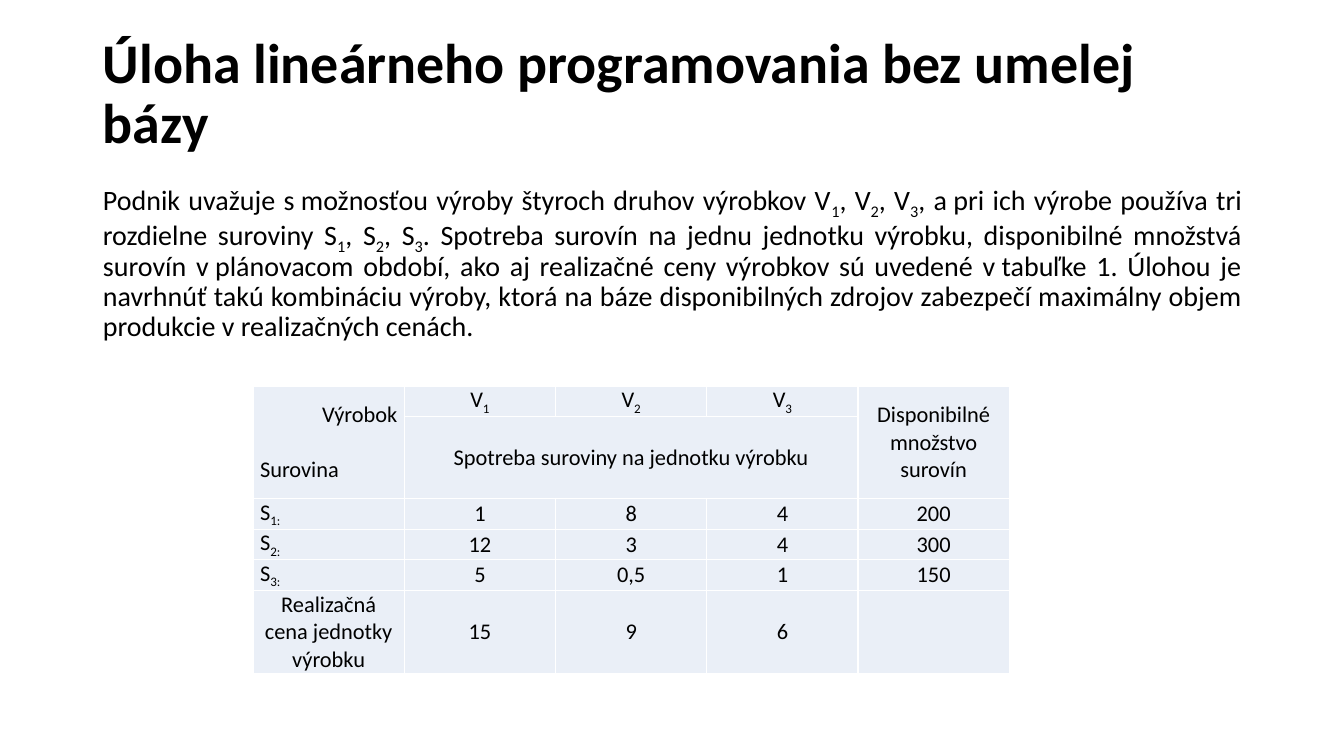
from dataclasses import dataclass

from lxml import etree
from pptx import Presentation
from pptx.dml.color import RGBColor
from pptx.enum.text import MSO_ANCHOR, MSO_AUTO_SIZE, PP_ALIGN
from pptx.oxml.ns import qn
from pptx.util import Inches, Pt

LEFT, CENTER, RIGHT = PP_ALIGN.LEFT, PP_ALIGN.CENTER, PP_ALIGN.RIGHT
JUSTIFY = PP_ALIGN.JUSTIFY
MIDDLE, TOP = MSO_ANCHOR.MIDDLE, MSO_ANCHOR.TOP
NO_AUTOFIT = MSO_AUTO_SIZE.NONE


@dataclass(frozen=True)
class Theme:
    font: str = "Calibri"
    text: str = "000000"
    cell: str = "EAEFF7"
    border: str = "FFFFFF"
    title_size: int = 40
    body_size: int = 20
    table_size: int = 16


THEME = Theme()

# Braces mark subscripts
TITLE = "Úloha lineárneho programovania bez umelej bázy"
TASK = (
    "Podnik uvažuje s\u00a0možnosťou výroby štyroch druhov výrobkov V{1}, V{2}, V{3}, "
    "a\u00a0pri ich výrobe používa tri rozdielne suroviny S{1}, S{2}, S{3}. "
    "Spotreba surovín na jednu jednotku výrobku, disponibilné množstvá surovín "
    "v\u00a0plánovacom období, ako aj realizačné ceny výrobkov sú uvedené "
    "v\u00a0tabuľke 1. Úlohou je navrhnúť takú kombináciu výroby, ktorá na báze "
    "disponibilných zdrojov zabezpečí maximálny objem produkcie "
    "v\u00a0realizačných cenách."
)
ROWS = [
    ["Výrobok", "V{1}", "V{2}", "V{3}", "Disponibilné množstvo surovín"],
    ["", "Spotreba suroviny na jednotku výrobku", "", "", ""],
    ["S{1:}", "1", "8", "4", "200"],
    ["S{2:}", "12", "3", "4", "300"],
    ["S{3:}", "5", "0,5", "1", "150"],
    ["Realizačná cena jednotky výrobku", "15", "9", "6", ""],
]
ROW_HEIGHTS = [0.29, 0.54, 0.29, 0.29, 0.29, 0.83]
MERGES = [((0, 0), (1, 0)), ((0, 4), (1, 4)), ((1, 1), (1, 3))]


def write(paragraph, text, size, align, bold=False):
    """Fill a paragraph, lowering the parts written in braces."""
    paragraph.alignment = align
    paragraph.font.size = Pt(size)
    for index, part in enumerate(text.replace("}", "{").split("{")):
        if not part:
            continue
        run = paragraph.add_run()
        run.text = part
        run.font.name = THEME.font
        run.font.size = Pt(size)
        run.font.bold = bold
        run.font.color.rgb = RGBColor.from_string(THEME.text)
        if index % 2:
            run.font._element.set("baseline", "-25000")


def place(shape, box, anchor):
    shape.left, shape.top, shape.width, shape.height = map(Inches, box)
    frame = shape.text_frame
    frame.word_wrap = True
    frame.auto_size = NO_AUTOFIT
    frame.vertical_anchor = anchor
    paragraph = frame.paragraphs[0]
    paragraph.line_spacing = 0.9
    return paragraph


def add_title(slide, box):
    paragraph = place(slide.shapes.title, box, MIDDLE)
    write(paragraph, TITLE, THEME.title_size, LEFT, bold=True)


def add_task(slide, box):
    paragraph = place(slide.placeholders[1], box, TOP)
    paragraph.space_before = Pt(10)
    write(paragraph, TASK, THEME.body_size, JUSTIFY)
    properties = paragraph._p.get_or_add_pPr()
    properties.set("marL", "0")
    properties.set("indent", "0")
    etree.SubElement(properties, qn("a:buNone"))


def style_cell(cell):
    cell.margin_left = cell.margin_right = Inches(0.07)
    cell.margin_top = cell.margin_bottom = 0
    cell.vertical_anchor = MIDDLE
    properties = cell._tc.get_or_add_tcPr()
    for side in ("lnL", "lnR", "lnT", "lnB"):
        line = etree.SubElement(properties, qn(f"a:{side}"), w=str(Pt(1)))
        fill = etree.SubElement(line, qn("a:solidFill"))
        etree.SubElement(fill, qn("a:srgbClr"), val=THEME.border)
    cell.fill.solid()
    cell.fill.fore_color.rgb = RGBColor.from_string(THEME.cell)


def add_consumption_table(slide, box):
    left, top, width, height = map(Inches, box)
    table = slide.shapes.add_table(
        len(ROWS), len(ROWS[0]), left, top, width, height).table
    table.first_row = table.horz_banding = False
    for row, row_height in zip(table.rows, ROW_HEIGHTS):
        row.height = Inches(row_height)
    for row_index, texts in enumerate(ROWS):
        for column_index, text in enumerate(texts):
            cell = table.cell(row_index, column_index)
            style_cell(cell)
            align = LEFT if text.startswith("S{") else CENTER
            write(cell.text_frame.paragraphs[0], text, THEME.table_size, align)
    for first, last in MERGES:
        table.cell(*first).merge(table.cell(*last))

    # Corner cell names both axes
    corner = table.cell(0, 0).text_frame
    corner.paragraphs[0].alignment = RIGHT
    material = corner.add_paragraph()
    material.space_before = Pt(19.5)
    write(material, "Surovina", THEME.table_size, LEFT)


def main():
    presentation = Presentation()
    presentation.slide_width = Inches(13.33)
    presentation.slide_height = Inches(7.5)
    slide = presentation.slides.add_slide(presentation.slide_layouts[1])
    add_title(slide, (0.92, 0.4, 11.5, 1.09))
    add_task(slide, (0.92, 1.77, 11.5, 5.46))
    add_consumption_table(slide, (2.51, 3.83, 7.5, sum(ROW_HEIGHTS)))
    presentation.save("out.pptx")


if __name__ == "__main__":
    main()
